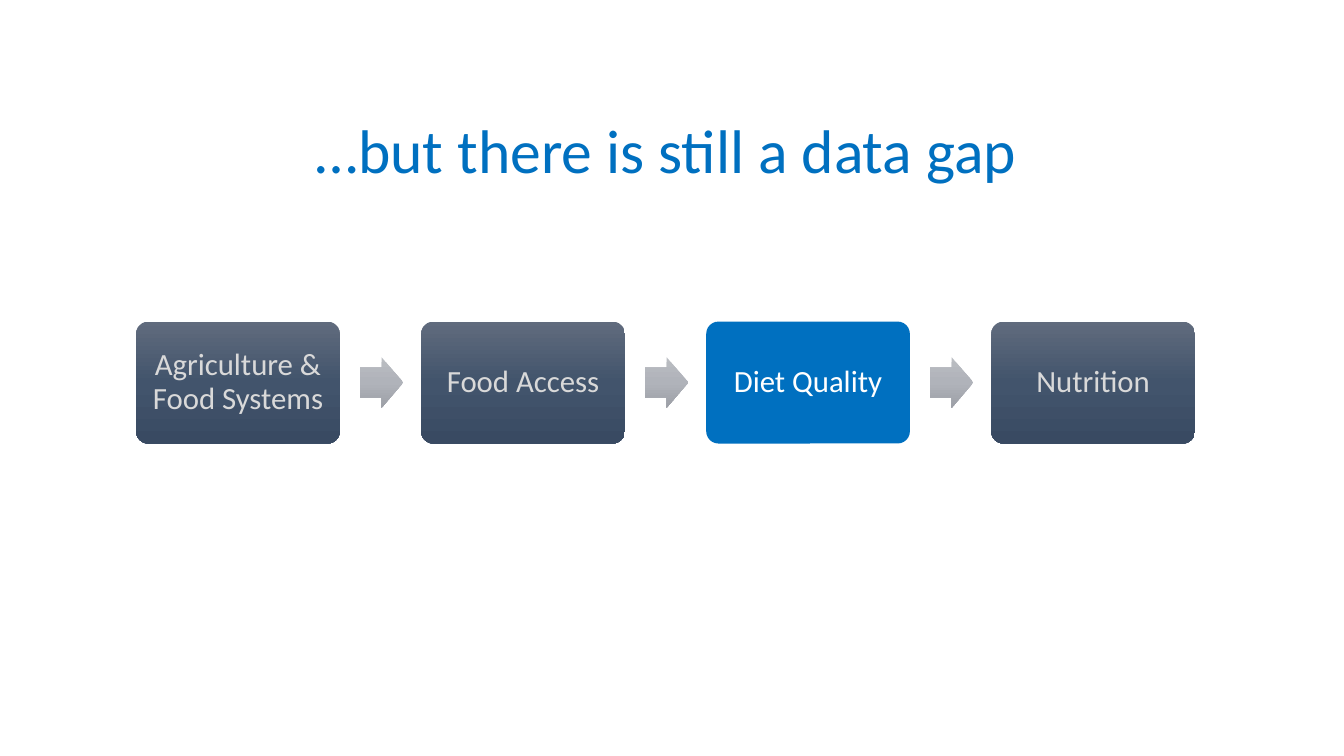
from copy import deepcopy
from dataclasses import dataclass

from pptx import Presentation
from pptx.dml.color import RGBColor
from pptx.enum.shapes import MSO_SHAPE
from pptx.enum.text import MSO_ANCHOR, PP_ALIGN
from pptx.oxml.ns import qn
from pptx.util import Inches, Pt


@dataclass(frozen=True)
class Theme:
    font: str = "Calibri"
    title_size: int = 44
    step_size: int = 22
    accent: str = "0070C0"
    step_text: str = "D9D9D9"
    accent_text: str = "FFFFFF"
    step_fill: tuple = ("606B7D", "42546C", "394A62")
    arrow_fill: tuple = ("BABDC2", "B0B3BA", "9C9FA6")


THEME = Theme()


def write_text(shape, text, size, color):
    frame = shape.text_frame
    frame.word_wrap = True
    frame.vertical_anchor = MSO_ANCHOR.MIDDLE
    para = frame.paragraphs[0]
    para.alignment = PP_ALIGN.CENTER
    para.line_spacing = 0.9
    span = para.add_run()
    span.text = text
    for name, value in {"name": THEME.font, "size": Pt(size)}.items():
        setattr(span.font, name, value)
    span.font.color.rgb = RGBColor.from_string(color)


def add_filled_shape(group, kind, place, adjustments, colors):
    """Add a borderless shape; several colors make a top-to-bottom gradient."""
    shape = group.shapes.add_shape(kind, *map(Inches, place))
    shape.shadow.inherit = False
    shape.line.fill.background()
    for index, value in enumerate(adjustments):
        shape.adjustments[index] = value
    if len(colors) == 1:
        shape.fill.solid()
        shape.fill.fore_color.rgb = RGBColor.from_string(colors[0])
        return shape
    shape.fill.gradient()
    shape.fill.gradient_angle = 270
    stop_list = shape._element.spPr.find(qn("a:gradFill")).find(qn("a:gsLst"))
    stop_list.insert(1, deepcopy(stop_list[0]))
    for index, (stop, color) in enumerate(zip(shape.fill.gradient_stops, colors)):
        stop.position = index / (len(colors) - 1)
        stop.color.rgb = RGBColor.from_string(color)
    return shape


deck = Presentation()
deck.slide_width, deck.slide_height = Inches(13.33), Inches(7.5)
page = deck.slides.add_slide(deck.slide_layouts[5])

title = page.shapes.title
title_place = {"left": 0.86, "top": 0.8, "width": 11.5, "height": 1.45}
for name, value in title_place.items():
    setattr(title, name, Inches(value))
write_text(title, "…but there is still a data gap", THEME.title_size, THEME.accent)

steps = ["Agriculture & Food Systems", "Food Access", "Diet Quality", "Nutrition"]
highlight = "Diet Quality"
first_left, step_top, step_width, step_height = 1.35, 3.19, 2.02, 1.21
pitch = 2.83 * 0.999
arrow_gap, arrow_width, arrow_height = 0.2, 0.43, 0.5
arrow_top = step_top + (step_height - arrow_height) / 2

flow = page.shapes.add_group_shape()
for index, step in enumerate(steps):
    left = first_left + index * pitch
    active = step == highlight
    box = add_filled_shape(
        flow, MSO_SHAPE.ROUNDED_RECTANGLE, (left, step_top, step_width, step_height),
        [0.1], (THEME.accent,) if active else THEME.step_fill)
    for side in ("left", "top", "right", "bottom"):
        setattr(box.text_frame, f"margin_{side}", Inches(0.12))
    write_text(box, step, THEME.step_size,
               THEME.accent_text if active else THEME.step_text)
    if index < len(steps) - 1:
        add_filled_shape(
            flow, MSO_SHAPE.RIGHT_ARROW,
            (left + step_width + arrow_gap, arrow_top, arrow_width, arrow_height),
            [0.6, 0.5], THEME.arrow_fill)

deck.save("out.pptx")
